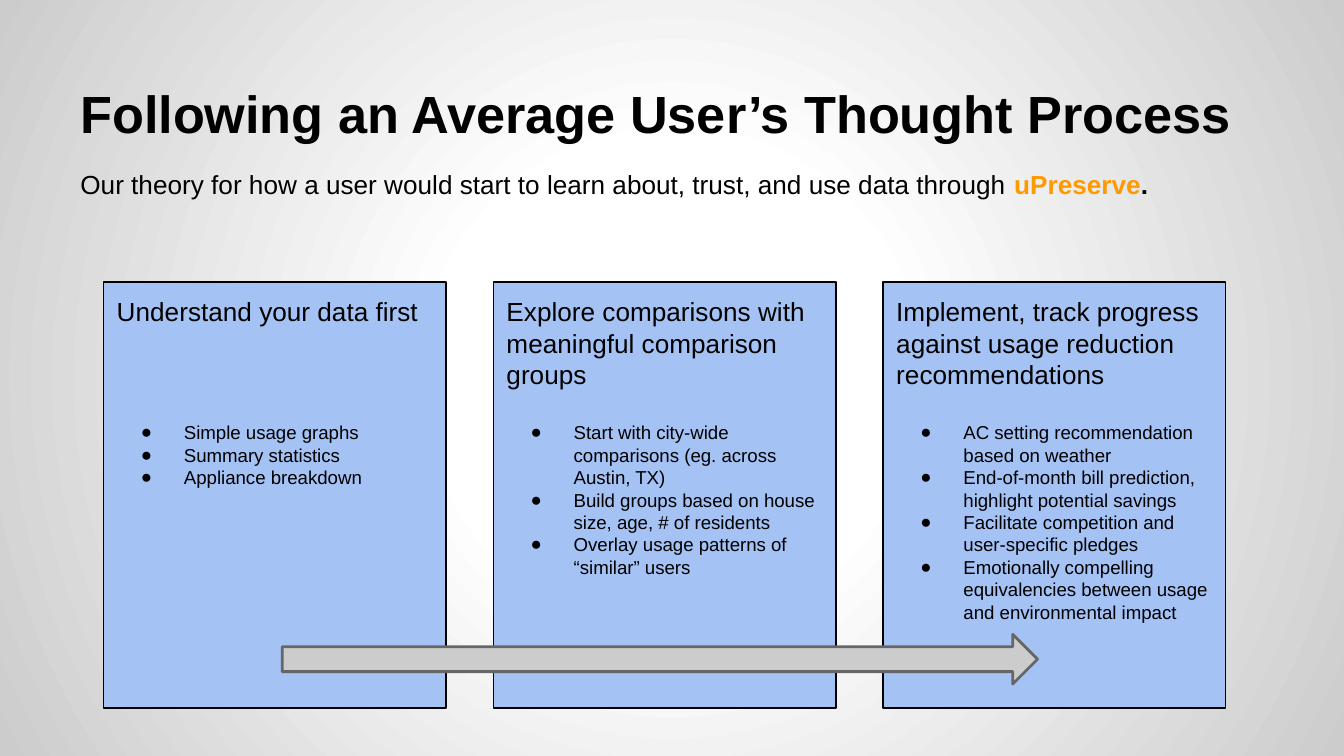
from lxml import etree
from pptx import Presentation
from pptx.dml.color import RGBColor
from pptx.enum.shapes import MSO_SHAPE
from pptx.enum.text import MSO_ANCHOR, PP_ALIGN
from pptx.oxml import parse_xml
from pptx.oxml.ns import nsdecls, qn
from pptx.util import Inches, Pt

RECTANGLE, RIGHT_ARROW = MSO_SHAPE.RECTANGLE, MSO_SHAPE.RIGHT_ARROW
TOP, BOTTOM, LEFT = MSO_ANCHOR.TOP, MSO_ANCHOR.BOTTOM, PP_ALIGN.LEFT

BLACK = RGBColor(0x00, 0x00, 0x00)
ORANGE = RGBColor(0xFF, 0x99, 0x00)
CARD_BLUE = RGBColor(0xA4, 0xC2, 0xF4)
ARROW_GRAY = RGBColor(0xCC, 0xCC, 0xCC)
ARROW_EDGE = RGBColor(0x66, 0x66, 0x66)

TITLE_FORMAT = {"size": Pt(28), "bold": True}
TEXT_FORMAT = {"size": Pt(14)}
STRONG_FORMAT = {"size": Pt(14), "bold": True}
BULLET_FORMAT = {"size": Pt(10)}

SLIDE_WIDTH = 10
SLIDE_HEIGHT = SLIDE_WIDTH * 9 / 16
CARD_LEFT, CARD_TOP, CARD_STEP = 0.77, 2.1, 2.9
CARD_WIDTH, CARD_HEIGHT = 2.55, 3.17
LINE_HEIGHT = 16.8

# Heading, number of 14-point lines between heading and bullets, bullets
CARDS = [
    ("Understand your data first", 3,
     ["Simple usage graphs", "Summary statistics", "Appliance breakdown"]),
    ("Explore comparisons with meaningful comparison groups", 1,
     ["Start with city-wide comparisons (eg. across Austin, TX)",
      "Build groups based on house size, age, # of residents",
      "Overlay usage patterns of “similar” users"]),
    ("Implement, track progress against usage reduction recommendations", 1,
     ["AC setting recommendation based on weather",
      "End-of-month bill prediction, highlight potential savings",
      "Facilitate competition and user-specific pledges",
      "Emotionally compelling equivalencies between usage and environmental impact"]),
]


def set_background(slide):
    """Radial gradient, white in the middle and gray at the edges."""
    slide.background.fill.solid()
    properties = slide.background._cSld.bg.bgPr
    stops = "".join(
        f'<a:gs pos="{position * 1000}"><a:srgbClr val="{color}"/></a:gs>'
        for position, color in [(0, "FFFFFF"), (30, "FFFFFF"), (100, "CCCCCC")])
    gradient = parse_xml(
        f'<a:gradFill {nsdecls("a")}><a:gsLst>{stops}</a:gsLst><a:path path="circle">'
        '<a:fillToRect l="50000" t="50000" r="50000" b="50000"/></a:path></a:gradFill>')
    properties.replace(properties.find(qn("a:solidFill")), gradient)


def prepare_frame(shape, anchor=TOP):
    frame = shape.text_frame
    settings = {"word_wrap": True, "vertical_anchor": anchor}
    for side in ("left", "right", "top", "bottom"):
        settings[f"margin_{side}"] = Inches(0.1)
    for name, value in settings.items():
        setattr(frame, name, value)
    return frame


def add_run(paragraph, text, text_format, color=BLACK):
    paragraph.alignment = LEFT
    run = paragraph.add_run()
    run.text = text
    for name, value in {"name": "Arial", **text_format}.items():
        setattr(run.font, name, value)
    run.font.color.rgb = color


def add_text_box(slide, box, runs, anchor=TOP):
    shape = slide.shapes.add_textbox(*map(Inches, box))
    paragraph = prepare_frame(shape, anchor).paragraphs[0]
    for run in runs:
        add_run(paragraph, *run)


def add_shape(slide, kind, box, fill, line, line_width):
    shape = slide.shapes.add_shape(kind, *map(Inches, box))
    shape.shadow.inherit = False
    shape.fill.solid()
    shape.fill.fore_color.rgb = fill
    shape.line.color.rgb = line
    shape.line.width = Pt(line_width)
    return shape


def add_bullet(frame, text):
    paragraph = frame.add_paragraph()
    add_run(paragraph, text, BULLET_FORMAT)
    properties = paragraph._p.get_or_add_pPr()
    properties.set("marL", str(Inches(0.5)))
    properties.set("indent", str(Inches(-0.32)))
    color = etree.SubElement(properties, qn("a:buClr"))
    etree.SubElement(color, qn("a:srgbClr"), val=str(BLACK))
    etree.SubElement(properties, qn("a:buFont"), typeface="Arial")
    etree.SubElement(properties, qn("a:buChar"), char="●")


def add_card(slide, index, heading, gap_lines, bullets):
    box = (CARD_LEFT + index * CARD_STEP, CARD_TOP, CARD_WIDTH, CARD_HEIGHT)
    frame = prepare_frame(add_shape(slide, RECTANGLE, box, CARD_BLUE, BLACK, 0.75))
    add_run(frame.paragraphs[0], heading, TEXT_FORMAT)
    frame.paragraphs[0].space_after = Pt(gap_lines * LINE_HEIGHT)
    for bullet in bullets:
        add_bullet(frame, bullet)


def main():
    presentation = Presentation()
    presentation.slide_width = Inches(SLIDE_WIDTH)
    presentation.slide_height = Inches(SLIDE_HEIGHT)
    slide = presentation.slides.add_slide(presentation.slide_layouts[6])
    set_background(slide)
    add_text_box(slide, (0.5, 0.23, 9, 0.94),
                 [("Following an Average User’s Thought Process", TITLE_FORMAT)], BOTTOM)
    add_text_box(slide, (0.5, 1.15, 9, 0.54), [
        ("Our theory for how a user would start to learn about, trust, and use data through ",
         TEXT_FORMAT),
        ("uPreserve", STRONG_FORMAT, ORANGE),
        (".", STRONG_FORMAT),
    ])
    for index, card in enumerate(CARDS):
        add_card(slide, index, *card)
    add_shape(slide, RIGHT_ARROW, (2.1, 4.72, 5.62, 0.37), ARROW_GRAY, ARROW_EDGE, 1.5)
    presentation.save("out.pptx")


if __name__ == "__main__":
    main()
